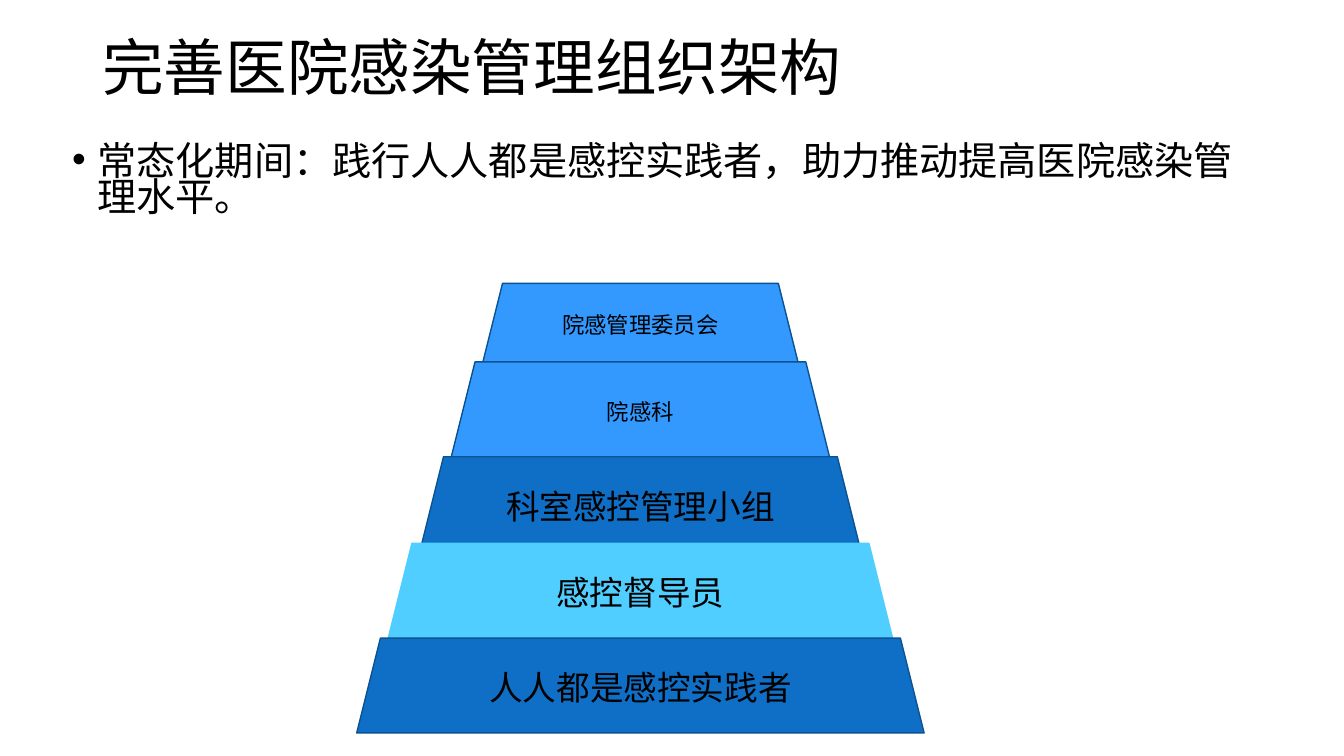
from dataclasses import dataclass

from lxml import etree
from pptx import Presentation
from pptx import util as u
from pptx.dml.color import RGBColor
from pptx.enum import shapes, text
from pptx.oxml import ns


@dataclass(frozen=True)
class Theme:
    font: str = "Noto Sans CJK SC"
    ink: str = "000000"
    light: str = "3399FF"
    deep: str = "0F6FC6"
    sky: str = "4FCEFF"
    edge: str = "0B5292"
    title: int = 44
    body: int = 28
    large: int = 24
    small: int = 16


THEME = Theme()


@dataclass(frozen=True)
class Level:
    label: str
    top: float
    fill: str
    size: int
    edge: str = THEME.edge
    height: float = 2.39


LEVELS = [
    Level("院感管理委员会", 7.14, THEME.light, THEME.small, height=1.98),
    Level("院感科", 9.12, THEME.light, THEME.small),
    Level("科室感控管理小组", 11.51, THEME.deep, THEME.large),
    Level("感控督导员", 13.69, THEME.sky, THEME.large, edge=THEME.sky),
    Level("人人都是感控实践者", 16.08, THEME.deep, THEME.large),
]
PYRAMID_CENTRE = 16.14
TOP_WIDTH = 7.94
WIDTH_STEP = 1.59
LINE_SPACING = 0.76


def apply(target, values: dict) -> None:
    for name, value in values.items():
        setattr(target, name, value)


def write(para, words: str, size: int) -> None:
    """Add one span, naming the font for both Latin and East Asian text."""
    span = para.add_run()
    span.text = words
    apply(span.font, {"name": THEME.font, "size": u.Pt(size)})
    span.font.color.rgb = RGBColor.from_string(THEME.ink)
    east_asian = etree.SubElement(span.font._element, ns.qn("a:ea"))
    east_asian.set("typeface", THEME.font)


def add_bullet(para) -> None:
    properties = para._p.get_or_add_pPr()
    properties.set("marL", str(u.Cm(0.64)))
    properties.set("indent", str(-u.Cm(0.64)))
    font = etree.SubElement(properties, ns.qn("a:buFont"))
    font.set("typeface", "Arial")
    bullet = etree.SubElement(properties, ns.qn("a:buChar"))
    bullet.set("char", "•")


def add_text(page, frame: tuple[float, ...], words: str, size: int,
             bulleted: bool = False) -> None:
    box = page.shapes.add_textbox(*map(u.Cm, frame))
    box.text_frame.word_wrap = True
    para = box.text_frame.paragraphs[0]
    if bulleted:
        add_bullet(para)
    para.line_spacing = LINE_SPACING
    write(para, words, size)


def add_level(page, level: Level, width: float) -> None:
    frame = (PYRAMID_CENTRE - width / 2, level.top, width, level.height)
    shape = page.shapes.add_shape(
        shapes.MSO_SHAPE.TRAPEZOID, *map(u.Cm, frame))
    shape.shadow.inherit = False
    shape.fill.solid()
    shape.fill.fore_color.rgb = RGBColor.from_string(level.fill)
    shape.line.color.rgb = RGBColor.from_string(level.edge)
    shape.line.width = u.Pt(1)
    apply(shape.text_frame, {
        "word_wrap": True,
        "vertical_anchor": text.MSO_ANCHOR.MIDDLE,
    })
    para = shape.text_frame.paragraphs[0]
    para.alignment = text.PP_ALIGN.CENTER
    write(para, level.label, level.size)


def main() -> None:
    deck = Presentation()
    apply(deck, {"slide_width": u.Cm(33.87), "slide_height": u.Cm(19.05)})
    page = deck.slides.add_slide(deck.slide_layouts[6])
    add_text(page, (2.33, 1.02, 29.21, 3.68),
             "完善医院感染管理组织架构", THEME.title)
    add_text(page, (1.57, 3.58, 30.48, 12.57),
             "常态化期间：践行人人都是感控实践者，助力推动提高医院感染管理水平。",
             THEME.body, bulleted=True)
    for index, level in enumerate(LEVELS):
        add_level(page, level, TOP_WIDTH + index * WIDTH_STEP)
    deck.save("out.pptx")


if __name__ == "__main__":
    main()
